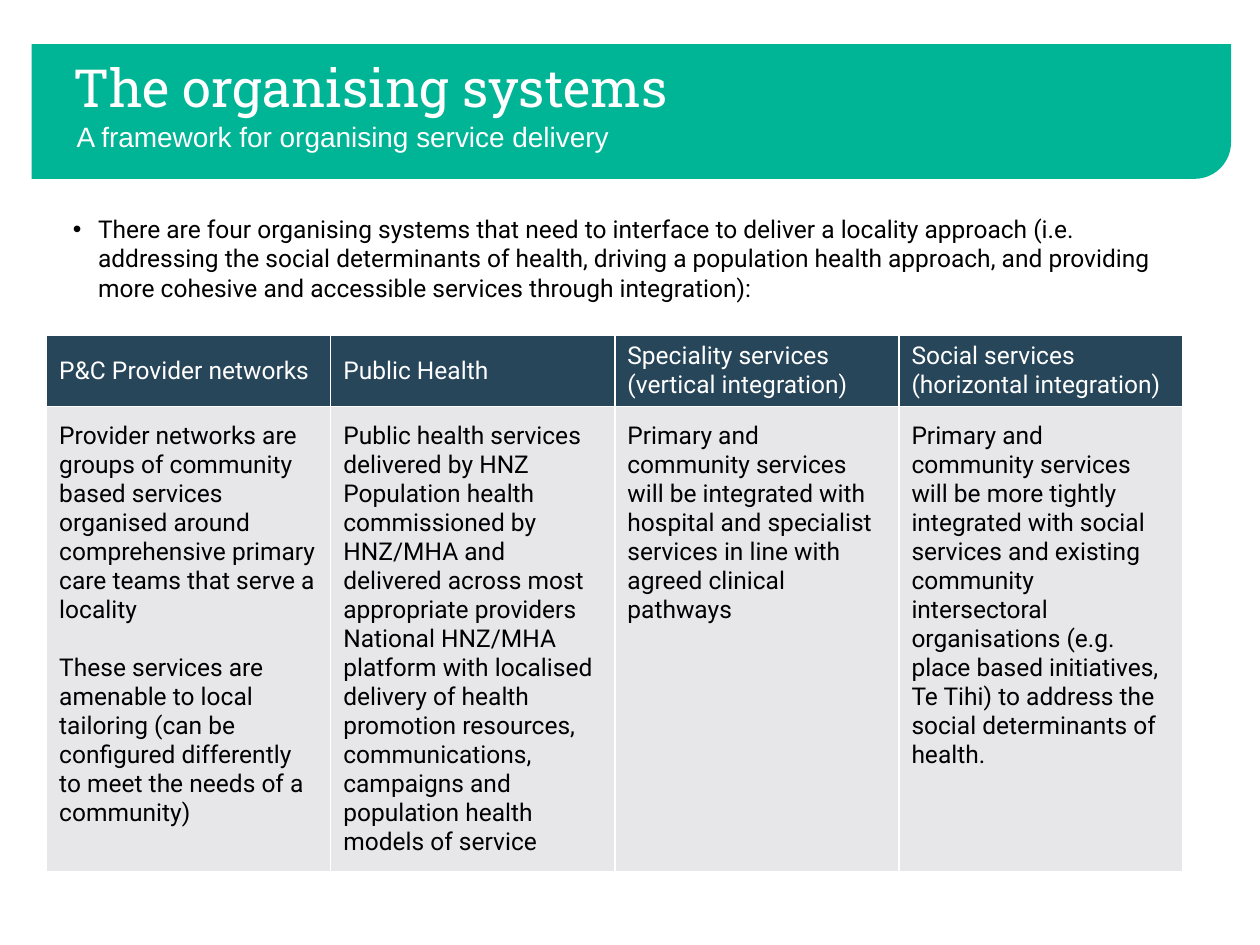
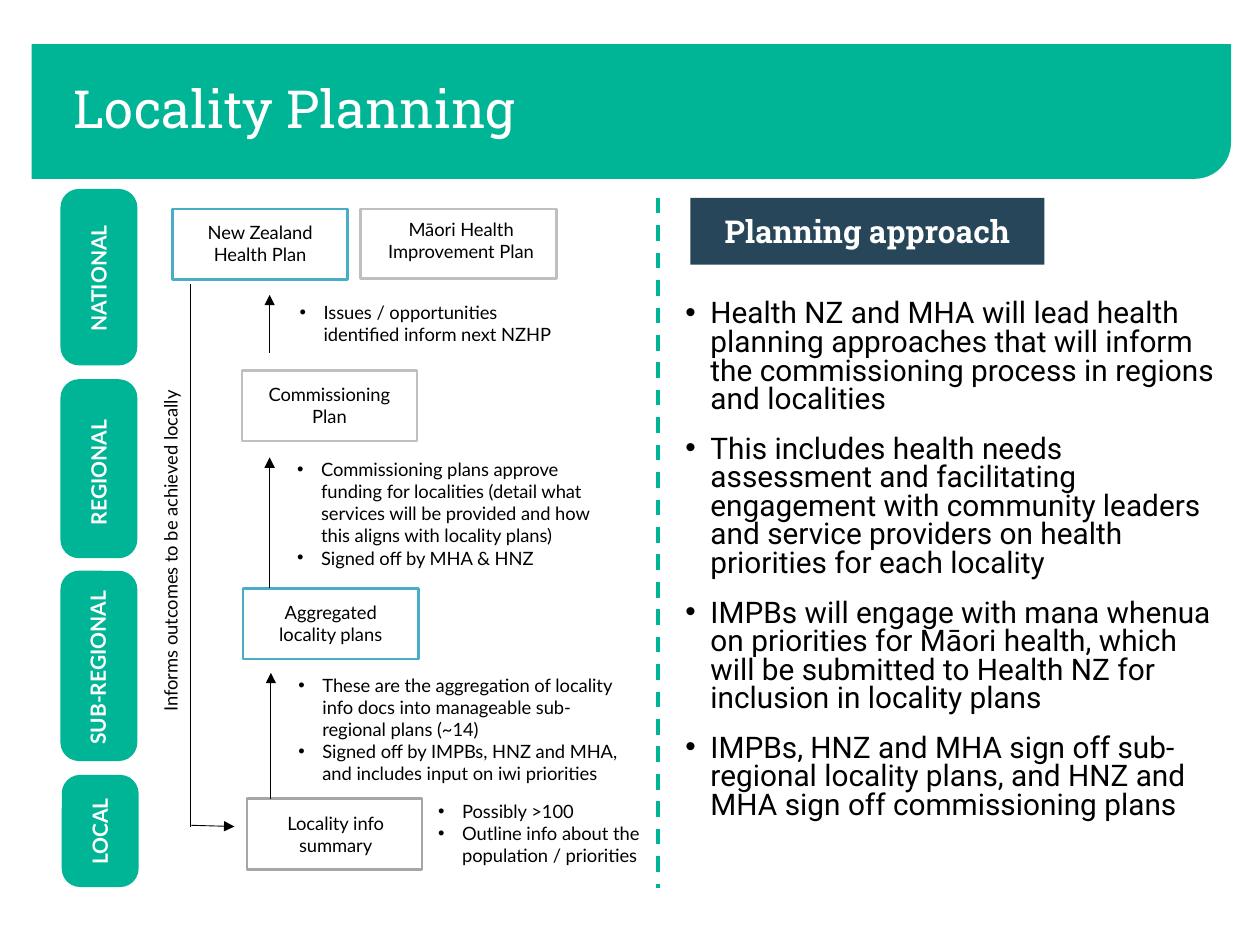
from pptx import Presentation, util as u
from pptx.dml.color import RGBColor
from pptx.enum import dml, shapes, text
from pptx.oxml.ns import qn
from lxml import etree


class Theme:
    green, navy, pale = "00B496", "28465A", "E7E7E9"
    white, black = "FFFFFF", "000000"
    blue, grey, dark = "4BACC6", "BFBFBF", "A6A6A6"
    slab, main, sub, note = "Roboto Slab", "Roboto", "Arial", "Lato"
    title, head, point, lead, cell, tag, small = 30, 18, 17, 16, 14, 12, 10.5
    thin, edge, rule = 0.5, 1.5, 2.25


def draw(slide, kind, at, fill=None, line=None):
    spot = [u.Inches(n) for n in at]
    if kind is None:
        return slide.shapes.add_textbox(*spot)
    item = slide.shapes.add_shape(kind, *spot)
    item.shadow.inherit = False
    if fill:
        item.fill.solid()
        item.fill.fore_color.rgb = RGBColor.from_string(fill)
    else:
        item.fill.background()
    if line:
        item.line.color.rgb = RGBColor.from_string(line)
        item.line.width = u.Pt(Theme.edge)
    else:
        item.line.fill.background()
    return item


def write(frame, lines, face, size, color, align=text.PP_ALIGN.LEFT,
          bold=False, dent=0, gap=0, pitch=None):
    frame.word_wrap = True
    frame.text = "\n".join(lines)
    for n, para in enumerate(frame.paragraphs):
        if dent:
            props = para._p.get_or_add_pPr()
            props.set("marL", str(u.Inches(dent)))
            props.set("indent", str(u.Inches(-dent)))
            etree.SubElement(props, qn("a:buFont")).set("typeface", "Arial")
            etree.SubElement(props, qn("a:buChar")).set("char", "•")
        para.alignment = align
        para.space_before = u.Pt(gap if n else 0)
        if pitch:
            para.line_spacing = pitch
        for run in para.runs:
            run.font.name = face
            run.font.size = u.Pt(size)
            run.font.bold = bold
            run.font.color.rgb = RGBColor.from_string(color)


deck = Presentation()
deck.slide_width, deck.slide_height = u.Inches(10), u.Inches(7.5)
kinds = shapes.MSO_SHAPE
mid = text.PP_ALIGN.CENTER

pages = []
for name, high in [("The organising systems", 0.73), ("Locality Planning", 1.07)]:
    page = deck.slides.add_slide(deck.slide_layouts[5])
    band = draw(page, kinds.ROUND_1_RECTANGLE, (0.25, 0.35, 9.52, 1.07), Theme.green)
    band.adjustments[0] = 0.27
    band._element.spPr.xfrm.set("flipV", "1")
    page.shapes._spTree.insert(2, band._element)
    title = page.shapes.title
    title.left, title.top = u.Inches(0.48), u.Inches(0.35)
    title.width, title.height = u.Inches(8.83), u.Inches(high)
    title.text_frame.auto_size = text.MSO_AUTO_SIZE.NONE
    title.text_frame.vertical_anchor = text.MSO_ANCHOR.MIDDLE
    write(title.text_frame, [name], Theme.slab, Theme.title, Theme.white, pitch=0.9)
    pages.append(page)
systems, planning = pages

lead = draw(systems, None, (0.51, 0.9, 9.25, 0.37))
write(lead.text_frame, ["A framework for organising service delivery"],
      Theme.sub, Theme.lead, Theme.white)
intro = draw(systems, None, (0.48, 1.65, 8.83, 0.86))
write(intro.text_frame, [
    "There are four organising systems that need to interface to deliver a locality approach "
    "(i.e. addressing the social determinants of health, driving a population health approach, "
    "and providing more cohesive and accessible services through integration):",
], Theme.main, Theme.cell, Theme.black, dent=0.2)

columns = [
    (["P&C Provider networks"], [
        "Provider networks are groups of community based services organised around "
        "comprehensive primary care teams that serve a locality",
        "These services are amenable to local tailoring (can be configured differently "
        "to meet the needs of a community)"], 16.5),
    (["Public Health"], [
        "Public health services delivered by HNZ",
        "Population health commissioned by HNZ/MHA and delivered across most appropriate providers",
        "National HNZ/MHA platform with localised delivery of health promotion resources, "
        "communications, campaigns and population health models of service"], 0),
    (["Speciality services", "(vertical integration)"], [
        "Primary and community services will be integrated with hospital and specialist "
        "services in line with agreed clinical pathways"], 0),
    (["Social services", "(horizontal integration)"], [
        "Primary and community services will be more tightly integrated with social services "
        "and existing community intersectoral organisations (e.g. place based initiatives, "
        "Te Tihi) to address the social determinants of health."], 0),
]
table = systems.shapes.add_table(2, len(columns), u.Inches(0.37), u.Inches(2.66),
                                 u.Inches(9.02), u.Inches(4.25)).table
table.horz_banding = False
table.rows[0].height, table.rows[1].height = u.Inches(0.56), u.Inches(3.69)
for col, (head, body, gap) in enumerate(columns):
    for row, (lines, fill, color) in enumerate([
            (head, Theme.navy, Theme.white), (body, Theme.pale, Theme.black)]):
        cell = table.cell(row, col)
        props = cell._tc.get_or_add_tcPr()
        for side in ("lnL", "lnR", "lnT", "lnB"):
            edge = etree.SubElement(props, qn("a:" + side), w=str(u.Pt(1)))
            paint = etree.SubElement(edge, qn("a:solidFill"))
            etree.SubElement(paint, qn("a:srgbClr"), val=Theme.white)
        cell.fill.solid()
        cell.fill.fore_color.rgb = RGBColor.from_string(fill)
        write(cell.text_frame, lines, Theme.main, Theme.cell, color, gap=gap if row else 0)
        cell.vertical_anchor = (text.MSO_ANCHOR.TOP if row and len(body) == 1
                                else text.MSO_ANCHOR.MIDDLE)
        cell.vertical_anchor = text.MSO_ANCHOR.MIDDLE if row == 0 else text.MSO_ANCHOR.TOP
        if row:
            cell.margin_top = u.Inches(0.12)

levels = [
    ("NATIONAL", (0.48, 1.5, 0.61, 1.4), (0.06, 2.05, 1.46, 0.32)),
    ("REGIONAL", (0.48, 3.01, 0.61, 1.42), (0.06, 3.59, 1.46, 0.32)),
    ("SUB-REGIONAL", (0.48, 4.53, 0.61, 1.51), (0.01, 5.14, 1.55, 0.32)),
    ("LOCAL", (0.49, 6.15, 0.61, 0.89), (0.34, 6.44, 0.92, 0.32)),
]
for name, at, spot in levels:
    pill = draw(planning, kinds.ROUNDED_RECTANGLE, at, Theme.green)
    pill.adjustments[0] = 0.24
    tag = draw(planning, None, spot)
    tag.rotation = 270
    write(tag.text_frame, [name], Theme.note, Theme.tag, Theme.white, mid, bold=True)

plans = [
    (["New Zealand Health Plan"], Theme.blue, (1.37, 1.66, 1.39, 0.56), (1.41, 1.71, 1.31, 0.47)),
    (["Māori Health Improvement Plan"], Theme.grey, (2.86, 1.66, 1.56, 0.55), (2.9, 1.68, 1.52, 0.47)),
    (["Commissioning", "Plan"], Theme.grey, (1.92, 2.94, 1.39, 0.56), (1.96, 2.99, 1.31, 0.45)),
    (["Aggregated locality plans"], Theme.blue, (1.93, 4.67, 1.39, 0.56), (1.97, 4.72, 1.31, 0.45)),
    (["Locality info summary"], Theme.dark, (1.96, 6.34, 1.39, 0.56), (2.01, 6.4, 1.31, 0.45)),
]
for lines, color, at, spot in plans:
    draw(planning, kinds.RECTANGLE, at, line=color)
    label = draw(planning, None, spot)
    write(label.text_frame, lines, Theme.note, Theme.small, Theme.black, mid)

notes = [
    ((2.28, 2.34, 2.33, 0.45), ["Issues / opportunities identified inform next NZHP"]),
    ((2.26, 3.59, 2.62, 0.98), [
        "Commissioning plans approve funding for localities (detail what services will be "
        "provided and how this aligns with locality plans)",
        "Signed off by MHA & HNZ"]),
    ((2.27, 5.3, 2.81, 0.98), [
        "These are the aggregation of locality info docs into manageable sub-regional plans (~14)",
        "Signed off by IMPBs, HNZ and MHA, and includes input on iwi priorities"]),
    ((3.38, 6.3, 1.97, 0.63), ["Possibly >100", "Outline info about the population / priorities"]),
]
for at, lines in notes:
    note = draw(planning, None, at)
    write(note.text_frame, lines, Theme.note, Theme.small, Theme.black, dent=0.19)

side = draw(planning, None, (-0.04, 4.2, 2.8, 0.29))
side.rotation = 270
write(side.text_frame, ["Informs outcomes to be achieved locally"],
      Theme.note, Theme.small, Theme.black)

links = [
    ((2.14, 2.8, 2.14, 2.34), Theme.black, Theme.thin, True),
    ((2.14, 4.67, 2.14, 3.63), Theme.black, Theme.thin, True),
    ((2.15, 6.34, 2.15, 5.34), Theme.black, Theme.thin, True),
    ((1.51, 6.56, 1.51, 2.25), Theme.black, Theme.thin, False),
    ((1.52, 6.55, 1.86, 6.56), Theme.black, Theme.thin, True),
    ((5.22, 1.57, 5.22, 7.05), Theme.green, Theme.rule, False),
]
for ends, color, width, arrow in links:
    link = planning.shapes.add_connector(shapes.MSO_CONNECTOR.STRAIGHT,
                                         *[u.Inches(n) for n in ends])
    link.line.color.rgb = RGBColor.from_string(color)
    link.line.width = u.Pt(width)
    if color == Theme.green:
        link.line.dash_style = dml.MSO_LINE.DASH
    if arrow:
        etree.SubElement(link.line._get_or_add_ln(), qn("a:tailEnd"), type="triangle")
    etree.SubElement(link._element.spPr, qn("a:effectLst"))

head = draw(planning, kinds.RECTANGLE, (5.48, 1.57, 2.81, 0.53), Theme.navy)
head.text_frame.vertical_anchor = text.MSO_ANCHOR.MIDDLE
write(head.text_frame, ["Planning approach"], Theme.slab, Theme.head, Theme.white, mid, bold=True)

points = draw(planning, None, (5.34, 2.34, 4.41, 4.56))
write(points.text_frame, [
    "Health NZ and MHA will lead health planning approaches that will inform the "
    "commissioning process in regions and localities",
    "This includes health needs assessment and facilitating engagement with community "
    "leaders and service providers on health priorities for each locality",
    "IMPBs will engage with mana whenua on priorities for Māori health, which will be "
    "submitted to Health NZ for inclusion in locality plans",
    "IMPBs, HNZ and MHA sign off sub-regional locality plans, and HNZ and MHA sign off "
    "commissioning plans",
], Theme.main, Theme.point, Theme.black, dent=0.2, gap=12, pitch=0.8)

deck.save("out.pptx")
